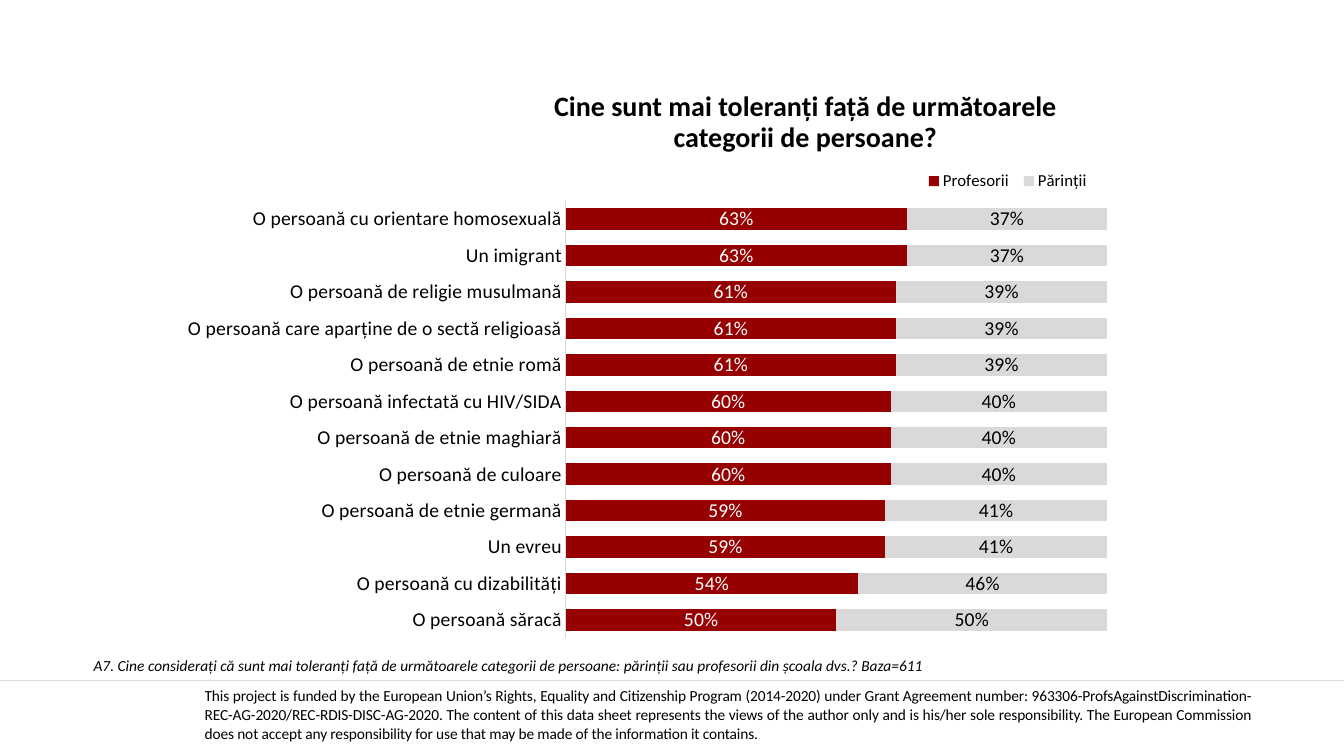
from lxml import etree
from pptx import Presentation
from pptx import util as u
from pptx.chart.data import CategoryChartData
from pptx.dml.color import RGBColor
from pptx.enum import chart as charts
from pptx.enum import shapes, text
from pptx.oxml.ns import qn

COLOURS = {"ink": "000000", "white": "FFFFFF", "rule": "D9D9D9",
           "teachers": "960000", "parents": "D9D9D9"}
FONT = "Calibri"
CELL = u.Inches(0.1)
COLUMNS, ROWS = 133.33, 75
PERCENT = "###0%"

TITLE = "Cine sunt mai toleranți față de următoarele categorii de persoane?"
QUESTION = ("A7. Cine considerați că sunt mai toleranți față de următoarele categorii de "
            "persoane: părinții sau profesorii din școala dvs.? Baza=611")
FUNDING = ("This project is funded by the European Union’s Rights, Equality and Citizenship "
           "Program (2014-2020) under Grant Agreement number: "
           "963306-ProfsAgainstDiscrimination-REC-AG-2020/REC-RDIS-DISC-AG-2020. "
           "The content of this data sheet represents the views of the author only and is "
           "his/her sole responsibility. The European Commission does not accept any "
           "responsibility for use that may be made of the information it contains.")
TEACHERS_SHARE = {
    "O persoană cu orientare homosexuală": 0.63,
    "Un imigrant": 0.63,
    "O persoană de religie musulmană": 0.61,
    "O persoană care aparține de o sectă religioasă": 0.61,
    "O persoană de etnie romă": 0.61,
    "O persoană infectată cu HIV/SIDA": 0.6,
    "O persoană de etnie maghiară": 0.6,
    "O persoană de culoare": 0.6,
    "O persoană de etnie germană": 0.59,
    "Un evreu": 0.59,
    "O persoană cu dizabilități": 0.54,
    "O persoană săracă": 0.5,
}


def grid(*cells):
    return [round(cell * CELL) for cell in cells]


def colour(name):
    return RGBColor.from_string(COLOURS[name])


def style_font(font, size, ink="ink", bold=False, italic=False):
    font.name = FONT
    font.size = u.Pt(size)
    font.bold = bold
    font.italic = italic
    font.color.rgb = colour(ink)


def write(frame, content, size, align=text.PP_ALIGN.LEFT, line_spacing=None,
          tracking=None, **font_format):
    frame.word_wrap = True
    paragraph = frame.paragraphs[0]
    paragraph.alignment = align
    paragraph.line_spacing = line_spacing
    run = paragraph.add_run()
    run.text = content
    style_font(run.font, size, **font_format)
    if tracking is not None:
        run.font._element.set("spc", str(tracking))


def add_title(slide):
    title = slide.shapes.title
    title.left, title.top, title.width, title.height = grid(50.2, 9, 59.4, 6.4)
    title.text_frame.auto_size = text.MSO_AUTO_SIZE.NONE
    title.text_frame.vertical_anchor = text.MSO_ANCHOR.MIDDLE
    write(title.text_frame, TITLE, 20, align=text.PP_ALIGN.CENTER,
          line_spacing=0.9, bold=True)


def add_funding_table(slide):
    table = slide.shapes.add_table(1, 1, *grid(20.3, 65.8, 103.9, 10.4)).table
    table.first_row = table.horz_banding = False
    cell = table.cell(0, 0)
    cell.fill.background()
    cell.margin_left = cell.margin_right = cell.margin_top = cell.margin_bottom = 0
    cell.vertical_anchor = text.MSO_ANCHOR.MIDDLE
    write(cell.text_frame, FUNDING, 11, align=text.PP_ALIGN.JUSTIFY, tracking=-10)


def add_rule(slide):
    rule = slide.shapes.add_connector(shapes.MSO_CONNECTOR.STRAIGHT,
                                      *grid(0, 67.5, COLUMNS, 67.5))
    rule.line.color.rgb = colour("rule")
    rule.line.width = u.Pt(0.5)
    etree.SubElement(rule._element.spPr, qn("a:effectLst"))


def add_question(slide):
    box = slide.shapes.add_textbox(*grid(8.3, 64.6, 95.7, 2.9))
    write(box.text_frame, QUESTION, 11, italic=True)


def place(parent, before, x, y, width, height, inner=False):
    for old in parent.findall(qn("c:layout")):
        parent.remove(old)
    layout = etree.Element(qn("c:layout"))
    manual = etree.SubElement(layout, qn("c:manualLayout"))
    settings = [("layoutTarget", "inner")] if inner else []
    settings += [("xMode", "edge"), ("yMode", "edge"),
                 ("x", x), ("y", y), ("w", width), ("h", height)]
    for tag, value in settings:
        etree.SubElement(manual, qn(f"c:{tag}")).set("val", str(value))
    parent.find(qn(before)).addprevious(layout)


def style_series(series, fill, ink):
    series.format.fill.solid()
    series.format.fill.fore_color.rgb = colour(fill)
    labels = series.data_labels
    labels.show_value = True
    labels.number_format = PERCENT
    labels.number_format_is_linked = False
    labels.position = charts.XL_LABEL_POSITION.CENTER
    style_font(labels.font, 14, ink=ink)


def style_axes(chart):
    categories = chart.category_axis
    categories.reverse_order = True
    categories.major_tick_mark = charts.XL_TICK_MARK.NONE
    categories.minor_tick_mark = charts.XL_TICK_MARK.NONE
    categories.has_major_gridlines = False
    categories.format.line.color.rgb = colour("rule")
    categories.format.line.width = u.Pt(0.75)
    style_font(categories.tick_labels.font, 14)
    values = chart.value_axis
    values.minimum_scale, values.maximum_scale = 0, 1
    values.has_major_gridlines = False
    values.visible = False


def add_tolerance_chart(slide):
    data = CategoryChartData(number_format=PERCENT)
    data.categories = list(TEACHERS_SHARE)
    shares = list(TEACHERS_SHARE.values())
    data.add_series("Profesorii", shares)
    data.add_series("Părinții", [round(1 - share, 2) for share in shares])
    chart = slide.shapes.add_chart(charts.XL_CHART_TYPE.BAR_STACKED_100,
                                   *grid(12.3, 15.5, 109.6, 49.3), data).chart
    chart.has_title = False
    style_font(chart.font, 10)
    plot = chart.plots[0]
    plot.gap_width, plot.overlap = 70, 100
    plot.vary_by_categories = False
    for series, fill, ink in zip(plot.series, ("teachers", "parents"), ("white", "ink")):
        style_series(series, fill, ink)
    style_axes(chart)
    chart.has_legend = True
    chart.legend.position = charts.XL_LEGEND_POSITION.TOP
    chart.legend.include_in_layout = False
    style_font(chart.legend.font, 12)
    place(chart.legend._element, "c:overlay", 0.72, 0.02, 0.16, 0.06)
    place(plot._element.getparent(), "c:barChart", 0.4, 0.09, 0.49, 0.88, inner=True)


def main():
    presentation = Presentation()
    presentation.slide_width, presentation.slide_height = grid(COLUMNS, ROWS)
    slide = presentation.slides.add_slide(presentation.slide_layouts[5])
    add_funding_table(slide)
    add_rule(slide)
    add_question(slide)
    add_tolerance_chart(slide)
    add_title(slide)
    presentation.save("out.pptx")


if __name__ == "__main__":
    main()
